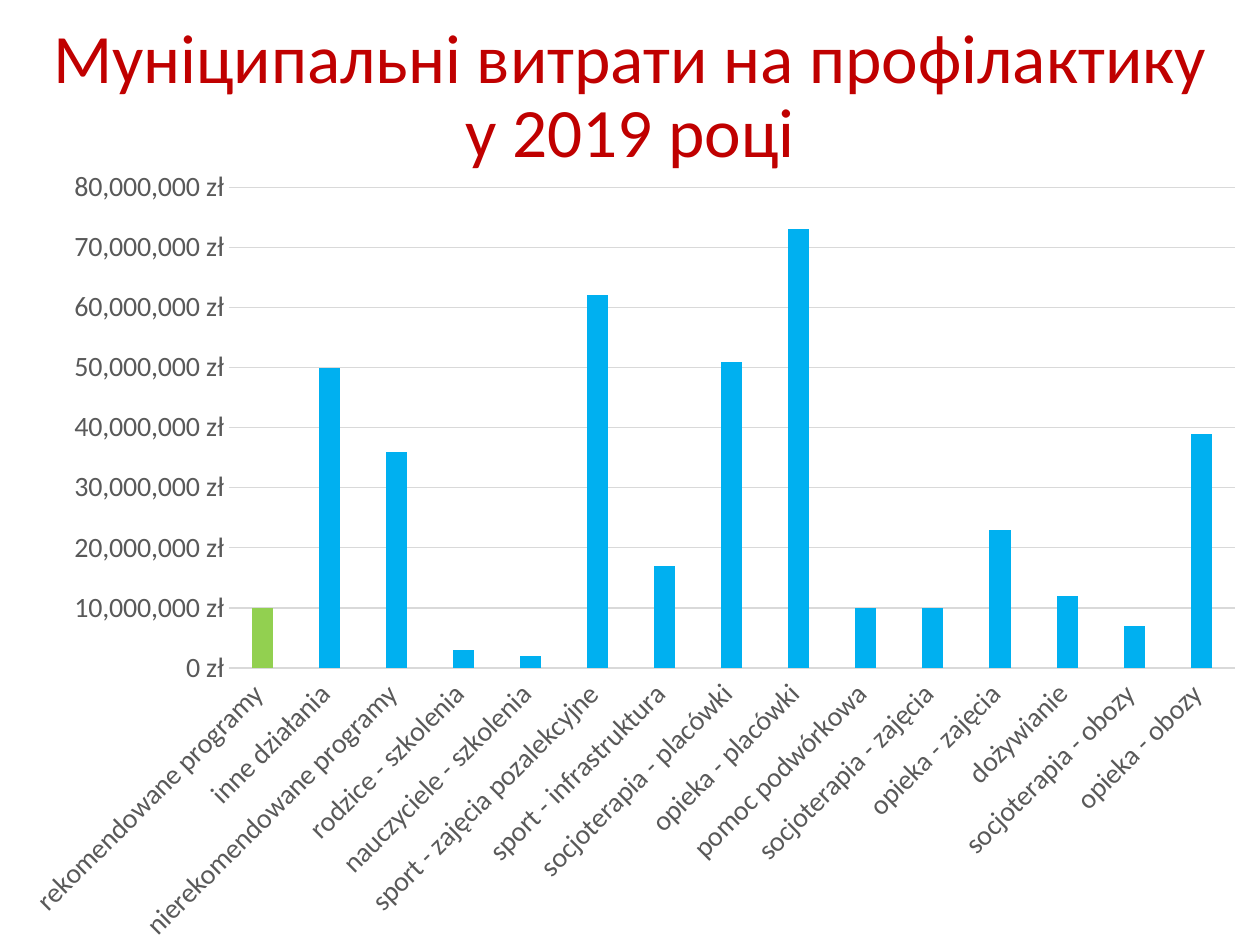
from pptx import Presentation
from pptx.chart.data import CategoryChartData
from pptx.dml.color import RGBColor
from pptx.enum.chart import XL_CHART_TYPE, XL_TICK_MARK
from pptx.enum.text import MSO_ANCHOR, PP_ALIGN
from pptx.oxml.ns import qn
from pptx.util import Emu, Pt

SCALE = 914400 // 126
FONT = "Calibri"
RED, BLUE, GREEN = "C00000", "00B0F0", "92D050"
LABEL_GREY, LINE_GREY = "595959", "D9D9D9"
MILLION = 1_000_000

# Spending in millions of zł
SPENDING = {
    "rekomendowane programy": 10,
    "inne działania": 50,
    "nierekomendowane programy": 36,
    "rodzice - szkolenia": 3,
    "nauczyciele - szkolenia": 2,
    "sport - zajęcia pozalekcyjne": 62,
    "sport - infrastruktura": 17,
    "socjoterapia - placówki": 51,
    "opieka - placówki": 73,
    "pomoc podwórkowa": 10,
    "socjoterapia - zajęcia": 10,
    "opieka - zajęcia": 23,
    "dożywianie": 12,
    "socjoterapia - obozy": 7,
    "opieka - obozy": 39,
}


def px(length):
    return Emu(length * SCALE)


def color(value):
    return RGBColor.from_string(value)


def apply(target, values):
    for name, value in values.items():
        setattr(target, name, value)


def style_font(font, size, hue):
    apply(font, {"name": FONT, "size": Pt(size)})
    font.color.rgb = color(hue)


def style_line(line):
    line.width = Pt(0.75)
    line.color.rgb = color(LINE_GREY)


def fill_solid(part, hue):
    part.format.fill.solid()
    part.format.fill.fore_color.rgb = color(hue)


def add_title(page, text, left, top, width, height):
    box = page.shapes.add_textbox(px(left), px(top), px(width), px(height))
    apply(box.text_frame, {"word_wrap": True, "vertical_anchor": MSO_ANCHOR.MIDDLE})
    para = box.text_frame.paragraphs[0]
    apply(para, {"alignment": PP_ALIGN.CENTER, "line_spacing": 0.9})
    span = para.add_run()
    span.text = text
    style_font(span.font, 39.6, RED)


def style_axes(chart):
    for axis in (chart.category_axis, chart.value_axis):
        apply(axis, {"major_tick_mark": XL_TICK_MARK.NONE,
                     "minor_tick_mark": XL_TICK_MARK.NONE})
        style_font(axis.tick_labels.font, 16, LABEL_GREY)

    # Slanted category labels
    categories = chart.category_axis
    style_line(categories.format.line)
    body = categories._element.find(qn("c:txPr")).find(qn("a:bodyPr"))
    body.set("rot", "-2700000")
    body.set("vert", "horz")

    # Money scale with gridlines
    money = chart.value_axis
    apply(money, {"minimum_scale": 0, "maximum_scale": 80 * MILLION,
                  "major_unit": 10 * MILLION, "has_major_gridlines": True})
    apply(money.tick_labels, {"number_format": '#,##0\\ "zł"',
                              "number_format_is_linked": False})
    money.format.line.fill.background()
    style_line(money.major_gridlines.format.line)


def add_spending_chart(page, left, top, width, height):
    # A space on each side keeps the slanted labels clear of the axis
    data = CategoryChartData()
    data.categories = [f" {name} " for name in SPENDING]
    data.add_series("Series 1", [value * MILLION for value in SPENDING.values()])
    chart = page.shapes.add_chart(XL_CHART_TYPE.COLUMN_CLUSTERED, px(left), px(top),
                                  px(width), px(height), data).chart
    apply(chart, {"has_legend": False, "has_title": False})
    style_font(chart.font, 10, "000000")

    # Columns, with the recommended programmes picked out
    plot = chart.plots[0]
    apply(plot, {"gap_width": 219, "overlap": -27, "vary_by_categories": False})
    series = plot.series[0]
    series.invert_if_negative = False
    fill_solid(series, BLUE)
    fill_solid(series.points[0], GREEN)
    style_axes(chart)


def main():
    deck = Presentation()
    apply(deck, {"slide_width": px(1260), "slide_height": px(945)})
    page = deck.slides.add_slide(deck.slide_layouts[6])
    add_spending_chart(page, 0, 154, 1260, 809)
    add_title(page, "Муніципальні витрати на профілактику у 2019 році", 39, 42, 1182, 112)
    deck.save("out.pptx")


if __name__ == "__main__":
    main()
